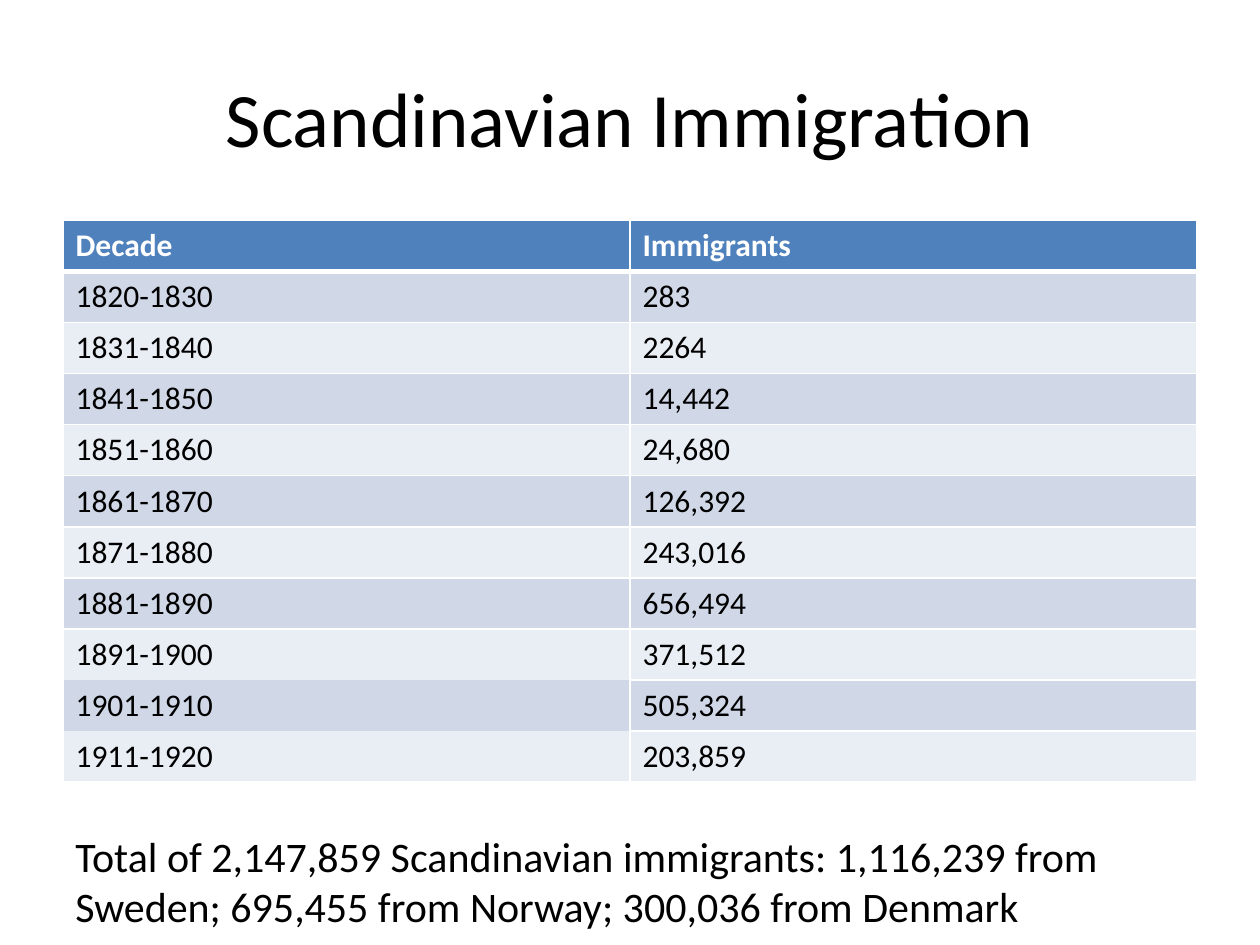
from lxml import etree
from pptx import Presentation
from pptx.dml.color import RGBColor
from pptx.enum.text import MSO_ANCHOR, PP_ALIGN
from pptx.oxml.ns import qn
from pptx.util import Inches, Pt

CENTER, LEFT = PP_ALIGN.CENTER, PP_ALIGN.LEFT
MIDDLE, TOP = MSO_ANCHOR.MIDDLE, MSO_ANCHOR.TOP

BLACK = RGBColor(0x00, 0x00, 0x00)
WHITE = RGBColor(0xFF, 0xFF, 0xFF)
HEADER_BLUE = RGBColor(0x4F, 0x81, 0xBD)
BANDS = (RGBColor(0xD0, 0xD8, 0xE8), RGBColor(0xE9, 0xED, 0xF4))
FONT = "Calibri"

SLIDE_W, SLIDE_H = Inches(10), Inches(7.5)
MARGIN = 0.05 * SLIDE_W
CONTENT_W = SLIDE_W - 2 * MARGIN

HEADINGS = ("Decade", "Immigrants")
IMMIGRANTS_BY_DECADE = (
    ("1820-1830", "283"),
    ("1831-1840", "2264"),
    ("1841-1850", "14,442"),
    ("1851-1860", "24,680"),
    ("1861-1870", "126,392"),
    ("1871-1880", "243,016"),
    ("1881-1890", "656,494"),
    ("1891-1900", "371,512"),
    ("1901-1910", "505,324"),
    ("1911-1920", "203,859"),
)
# Decades whose first cell has no rule beneath it
UNRULED_BELOW = ("1891-1900", "1901-1910")


def add_run(paragraph, text, size, color=BLACK, bold=False):
    run = paragraph.add_run()
    run.text = text
    run.font.name = FONT
    run.font.size = Pt(size)
    run.font.bold = bold
    run.font.color.rgb = color


def add_text(slide, box, text, size, align, anchor):
    frame = slide.shapes.add_textbox(*map(int, box)).text_frame
    frame.word_wrap = True
    frame.vertical_anchor = anchor
    paragraph = frame.paragraphs[0]
    paragraph.alignment = align
    add_run(paragraph, text, size)


def set_borders(cell, top, bottom):
    """Rule the cell in white; widths are points and 0 means no line."""
    properties = cell._tc.get_or_add_tcPr()
    for side, width in (("L", 1), ("R", 1), ("T", top), ("B", bottom)):
        line = etree.SubElement(properties, qn(f"a:ln{side}"), w=str(Pt(width)))
        if width:
            paint = etree.SubElement(line, qn("a:solidFill"))
            etree.SubElement(paint, qn("a:srgbClr"), val=str(WHITE))
        else:
            etree.SubElement(line, qn("a:noFill"))


def rule_below(row, column, rows):
    if row == 0:
        return 3
    return 0 if column == 0 and rows[row][0] in UNRULED_BELOW else 1


def add_decade_table(slide, box):
    rows = (HEADINGS, *IMMIGRANTS_BY_DECADE)
    left, top, width, height = map(int, box)
    table = slide.shapes.add_table(
        len(rows), len(HEADINGS), left, top, width, height).table
    for table_row in table.rows:
        table_row.height = height // len(rows)
    for r, values in enumerate(rows):
        is_header = r == 0
        for c, value in enumerate(values):
            cell = table.cell(r, c)
            above = 1 if is_header else rule_below(r - 1, c, rows)
            set_borders(cell, above, rule_below(r, c, rows))
            cell.fill.solid()
            cell.fill.fore_color.rgb = HEADER_BLUE if is_header else BANDS[(r - 1) % 2]
            add_run(cell.text_frame.paragraphs[0], value, 18,
                    WHITE if is_header else BLACK, is_header)


def build_slide(presentation):
    slide = presentation.slides.add_slide(presentation.slide_layouts[6])
    add_text(slide, (MARGIN, 0.04 * SLIDE_H, CONTENT_W, SLIDE_H / 6),
             "Scandinavian Immigration", 44, CENTER, MIDDLE)
    add_decade_table(slide, (MARGIN, 1.75 / 7.5 * SLIDE_H,
                             CONTENT_W, 4.46 / 7.5 * SLIDE_H))
    add_text(slide, (MARGIN, 6.54 / 7.5 * SLIDE_H, 0.877 * SLIDE_W, 0.91 / 7.5 * SLIDE_H),
             "Total of 2,147,859 Scandinavian immigrants: 1,116,239 from Sweden; "
             "695,455 from Norway; 300,036 from Denmark", 24, LEFT, TOP)


def main():
    presentation = Presentation()
    presentation.slide_width, presentation.slide_height = SLIDE_W, SLIDE_H
    build_slide(presentation)
    presentation.save("out.pptx")


if __name__ == "__main__":
    main()
